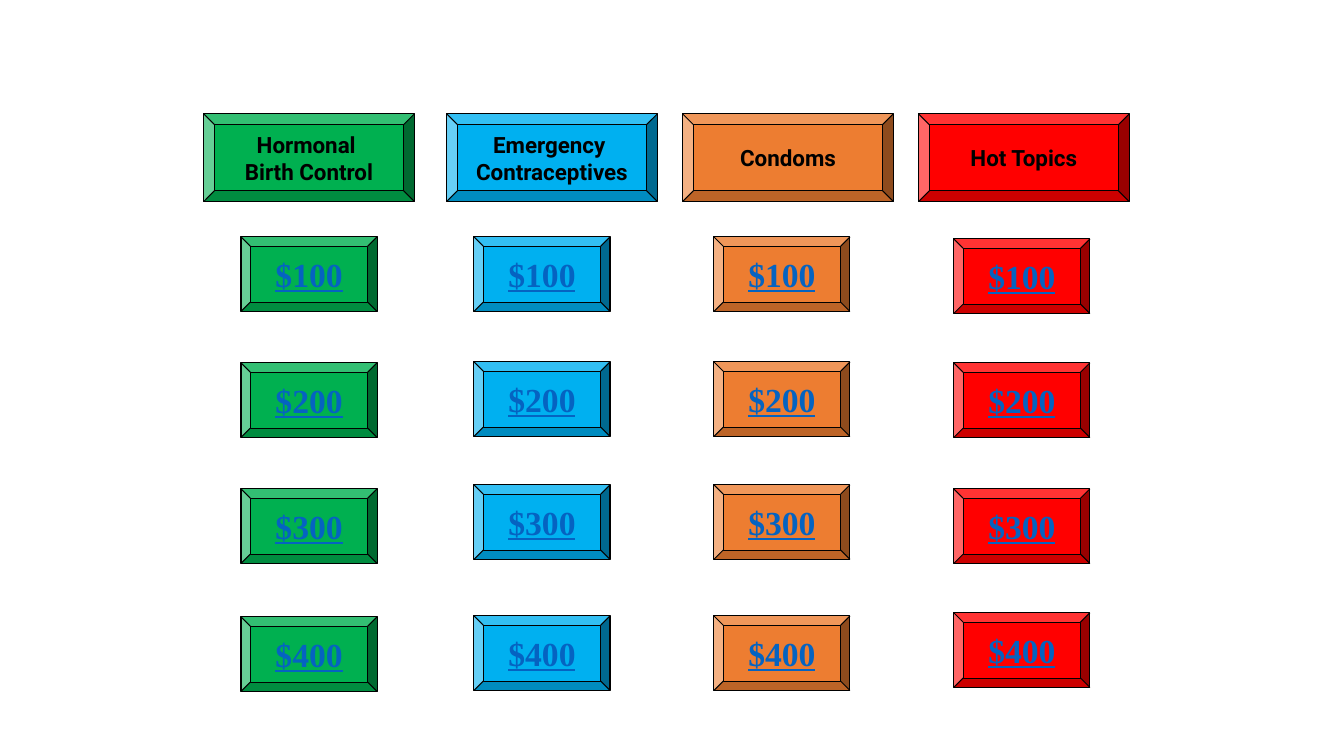
"""Builds a quiz board slide with four categories and four prize tiles each."""
from dataclasses import dataclass

from pptx import Presentation
from pptx.dml.color import RGBColor as RGB
from pptx.enum.shapes import MSO_SHAPE as SHAPE
from pptx.enum.text import MSO_ANCHOR as ANCHOR, PP_ALIGN as ALIGN
from pptx.util import Inches, Pt


@dataclass(frozen=True)
class Theme:
    """Colours, fonts and type sizes of the board."""
    green: str = "00B050"
    blue: str = "00B0F0"
    orange: str = "ED7D31"
    red: str = "FF0000"
    ink: str = "000000"
    link: str = "0563C1"
    header_font: str = "Roboto"
    prize_font: str = "Times New Roman"
    header_size: int = 16
    prize_size: int = 24
    border: float = 0.75


class Board:
    """Draws headers and prize tiles on the current slide."""

    HEADER_TOP, HEADER_SIZE = 1.13, (2.09, 0.87)
    PRIZE_SIZE = (1.35, 0.74)

    def __init__(self, slide, theme):
        """Keeps the slide and its style."""
        self.slide = slide
        self.theme = theme

    def bevel(self, left, top, size, fill, lines, font, points, color, underline=False):
        """Adds a bevelled button with one centred paragraph per line."""
        s = self.slide.shapes.add_shape(
            SHAPE.BEVEL, Inches(left), Inches(top), *map(Inches, size))
        s.shadow.inherit = False
        s.fill.solid()
        s.fill.fore_color.rgb = RGB.from_string(fill)
        s.line.color.rgb = RGB.from_string(self.theme.ink)
        s.line.width = Pt(self.theme.border)
        tf = s.text_frame
        tf.word_wrap = False
        tf.vertical_anchor = ANCHOR.MIDDLE
        tf.text = "\n".join(lines)
        for p in tf.paragraphs:
            p.alignment = ALIGN.CENTER
            p.font.name = font
            p.font.size = Pt(points)
            p.font.bold = True
            p.font.underline = underline
            p.font.color.rgb = RGB.from_string(color)

    def header(self, left, fill, lines):
        """Adds a category header."""
        t = self.theme
        self.bevel(left, self.HEADER_TOP, self.HEADER_SIZE, fill, lines,
                   t.header_font, t.header_size, t.ink)

    def prize(self, left, top, fill, amount):
        """Adds a tile with an underlined amount."""
        t = self.theme
        self.bevel(left, top, self.PRIZE_SIZE, fill, [f"${amount}"],
                   t.prize_font, t.prize_size, t.link, underline=True)


def main():
    """Builds and saves the slide."""
    prs = Presentation()
    prs.slide_width, prs.slide_height = Inches(13.33), Inches(7.5)
    theme = Theme()
    board = Board(prs.slides.add_slide(prs.slide_layouts[6]), theme)

    middle_tops = (2.35, 3.59, 4.81, 6.11)
    categories = [
        (["Hormonal ", "Birth Control"], theme.green, 2.02, 2.39, (2.35, 3.6, 4.85, 6.12)),
        (["Emergency ", "Contraceptives"], theme.blue, 4.43, 4.7, middle_tops),
        (["Condoms"], theme.orange, 6.77, 7.08, middle_tops),
        (["Hot Topics"], theme.red, 9.11, 9.46, (2.37, 3.6, 4.85, 6.08)),
    ]
    for lines, fill, header_left, prize_left, tops in categories:
        board.header(header_left, fill, lines)
        for rank, top in enumerate(tops, start=1):
            board.prize(prize_left, top, fill, 100 * rank)

    prs.save("out.pptx")


if __name__ == "__main__":
    main()
